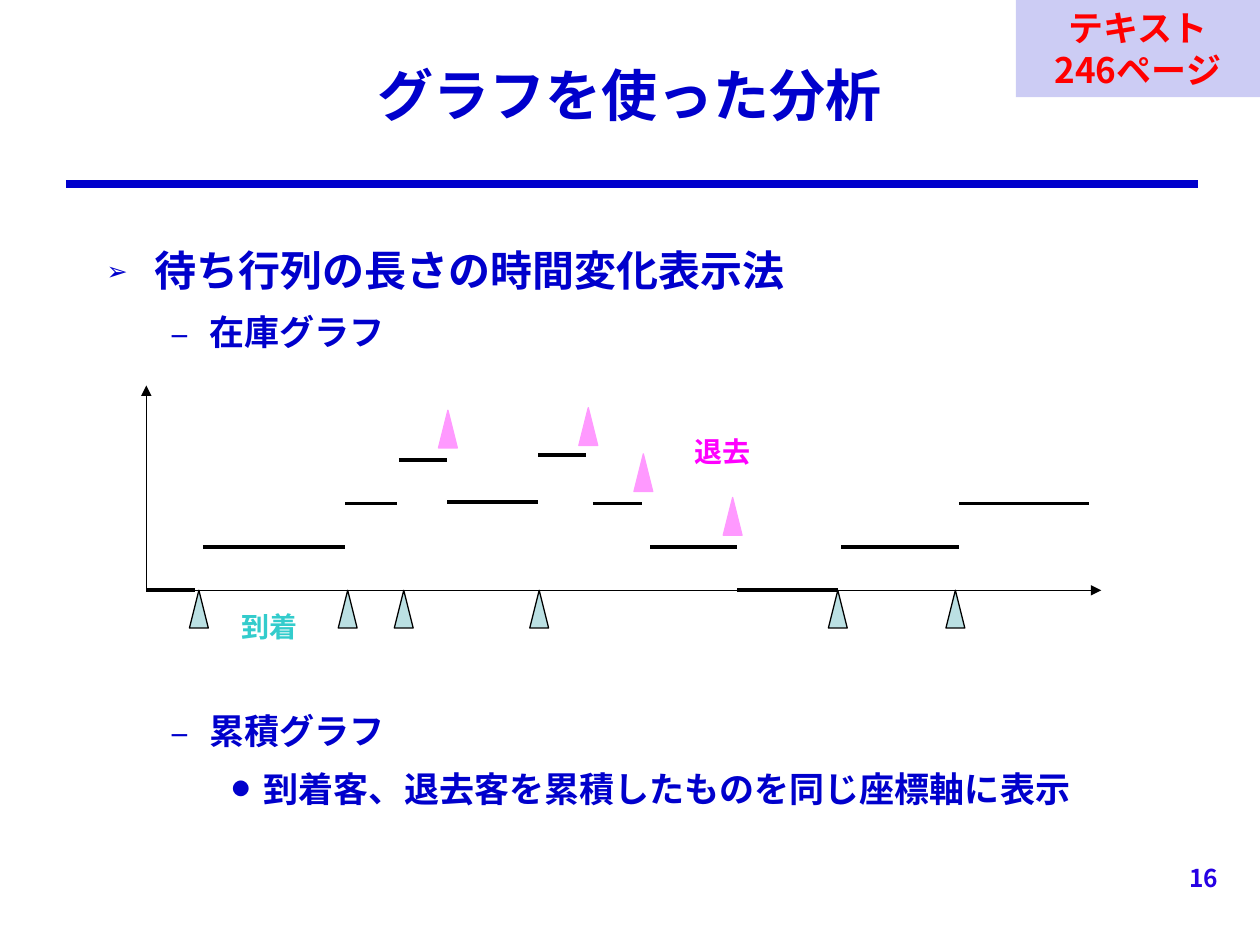
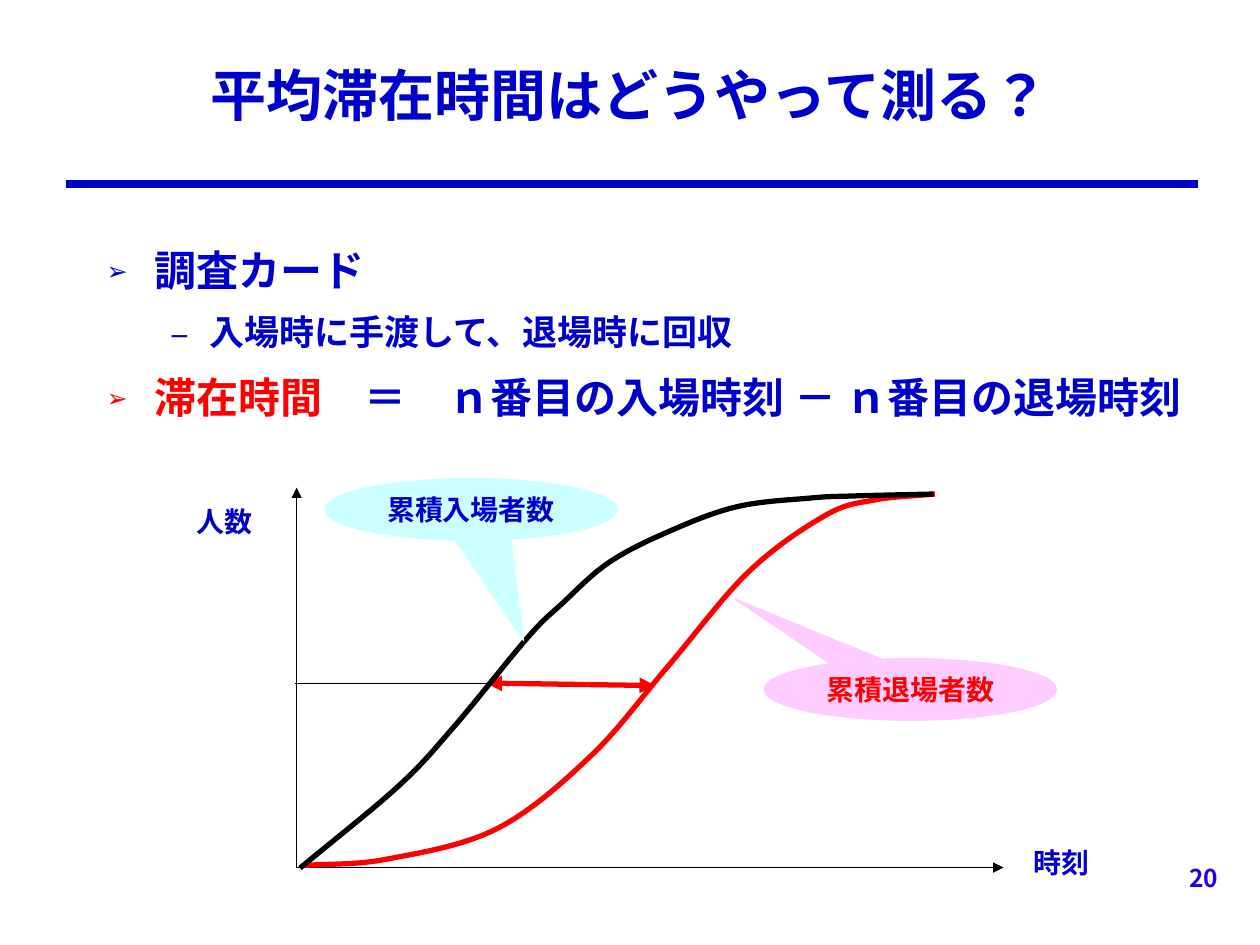
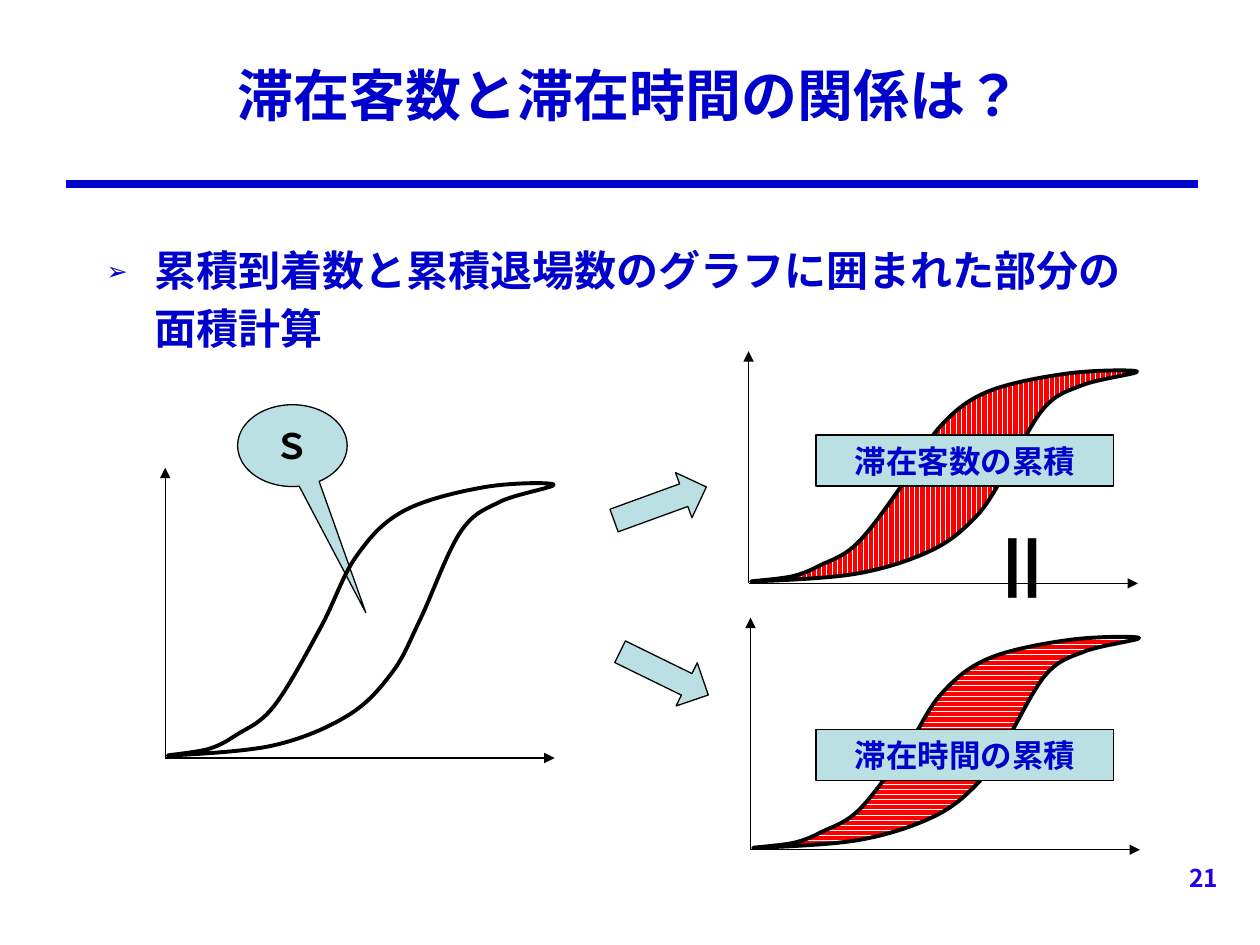
from dataclasses import dataclass
from typing import NamedTuple

from lxml.etree import SubElement
from pptx import Presentation
from pptx.dml.color import RGBColor
from pptx.enum.dml import MSO_PATTERN
from pptx.enum.lang import MSO_LANGUAGE_ID
from pptx.enum.shapes import MSO_CONNECTOR, MSO_SHAPE
from pptx.enum.text import MSO_ANCHOR, PP_ALIGN
from pptx.oxml.ns import qn
from pptx.util import Cm, Pt


@dataclass(frozen=True)
class Theme:
    blue: str = "0000CC"
    number: str = "2600E4"
    red: str = "FF0000"
    black: str = "000000"
    white: str = "FFFFFF"
    pale_teal: str = "BBE0E3"
    teal: str = "33CCCC"
    pink: str = "FF99FF"
    magenta: str = "FF00FF"
    pale_pink: str = "FFCCFF"
    pale_cyan: str = "CCFFFF"
    sans: str = "Noto Sans CJK JP"
    mono: str = "Courier New"
    title_size: int = 32
    body_size: int = 24
    sub_size: int = 20
    caption_size: int = 18
    label_size: int = 16
    number_size: int = 14
    sign_size: int = 48
    thin: float = 0.75
    medium: float = 2.25
    thick: float = 3
    rule: float = 4.5
    leading: float = 1.2
    body_leading: float = 1.38
    body_gap: float = 0.27


THEME = Theme()


class Point(NamedTuple):
    x: float
    y: float


class Box(NamedTuple):
    left: float
    top: float
    width: float
    height: float

    def lengths(self) -> list[Cm]:
        return [Cm(value) for value in self]


class Style(NamedTuple):
    size: float
    color: str = THEME.blue
    font: str = THEME.sans
    align: PP_ALIGN = PP_ALIGN.CENTER


class Level(NamedTuple):
    mark: str
    mark_percent: int
    indent: float
    hanging: float
    size: int


class Item(NamedTuple):
    """A bulleted line; the lead is a red opening part, the gap replaces the usual space above."""
    level: int
    text: str
    lead: str = ""
    gap: float | None = None


class Step(NamedTuple):
    """One flat stretch of the stock graph."""
    start: float
    end: float
    queue: float


class Panel(NamedTuple):
    """A small cumulative graph placed by the origin of its axes."""
    origin: Point
    axis_height: float
    scale: float
    pattern: MSO_PATTERN | None = None


LEVELS = (
    Level("➢", 60, 0.97, 0.97, THEME.body_size),
    Level("–", 100, 2.07, 0.79, THEME.sub_size),
    Level("●", 50, 3.17, 0.64, THEME.sub_size),
)
TITLE_BOX = Box(1.9, 0.39, 21.59, 3)
NUMBER_BOX = Box(22.96, 17.27, 1.85, 1.27)
BODY_BOX = Box(1.9, 4.65, 21.59, 13.23)
LABEL = Style(THEME.label_size, font=THEME.mono)


def rgb(color: str) -> RGBColor:
    return RGBColor.from_string(color)


def format_run(run, style: Style) -> None:
    run.font.size = Pt(style.size)
    run.font.bold = True
    run.font.name = style.font
    run.font.color.rgb = rgb(style.color)
    run.font.language_id = MSO_LANGUAGE_ID.JAPANESE
    SubElement(run.font._element, qn("a:ea"), typeface=THEME.sans)


def put_text(shape, text: str, style: Style, anchor=MSO_ANCHOR.TOP, wrap: bool = True) -> None:
    frame = shape.text_frame
    frame.text = text
    frame.word_wrap = wrap
    frame.vertical_anchor = anchor
    for para in frame.paragraphs:
        para.alignment = style.align
        para.line_spacing = Pt(style.size * THEME.leading)
        for run in para.runs:
            format_run(run, style)


def add_label(page, box: Box, text: str, style: Style, anchor=MSO_ANCHOR.TOP):
    label = page.shapes.add_textbox(*box.lengths())
    put_text(label, text, style, anchor)
    return label


def add_block(page, kind: MSO_SHAPE, box: Box, fill: str, outline: str = THEME.black):
    block = page.shapes.add_shape(kind, *box.lengths())
    block.shadow.inherit = False
    block.fill.solid()
    block.fill.fore_color.rgb = rgb(fill)
    block.line.color.rgb = rgb(outline)
    block.line.width = Pt(THEME.thin)
    return block


def add_callout(page, box: Box, tip: tuple[float, float], text: str, style: Style,
                fill: str, outline: str) -> None:
    """The tip is measured from the centre, in widths and heights of the balloon."""
    callout = add_block(page, MSO_SHAPE.OVAL_CALLOUT, box, fill, outline)
    callout.adjustments[0], callout.adjustments[1] = tip
    put_text(callout, text, style, MSO_ANCHOR.MIDDLE)


def add_line(page, start: Point, end: Point, width: float, color: str = THEME.black,
             arrows: tuple[str, ...] = ()) -> None:
    line = page.shapes.add_connector(
        MSO_CONNECTOR.STRAIGHT, Cm(start.x), Cm(start.y), Cm(end.x), Cm(end.y))
    line.line.color.rgb = rgb(color)
    line.line.width = Pt(width)
    properties = line._element.spPr
    for arrow in arrows:
        SubElement(properties.find(qn("a:ln")), qn(f"a:{arrow}"), type="triangle")
    SubElement(properties, qn("a:effectLst"))


def add_axes(page, origin: Point, width: float, height: float) -> None:
    for end in (Point(origin.x + width, origin.y), Point(origin.x, origin.y - height)):
        add_line(page, origin, end, THEME.thin, arrows=("tailEnd",))


def bezier_points(knots: list[Point], closed: bool) -> list[Point]:
    """Two handles and an end for each piece of the smooth curve through the knots."""
    if closed:
        chain = [knots[-1], *knots, *knots[:2]]
    else:
        first, second = knots[:2]
        before_last, last = knots[-2:]
        chain = [Point(2 * first.x - second.x, 2 * first.y - second.y), *knots,
                 Point(2 * last.x - before_last.x, 2 * last.y - before_last.y)]
    points = []
    for before, start, end, after in zip(chain, chain[1:], chain[2:], chain[3:]):
        points += [
            Point(start.x + (end.x - before.x) / 6, start.y + (end.y - before.y) / 6),
            Point(end.x - (after.x - start.x) / 6, end.y - (after.y - start.y) / 6),
            end,
        ]
    return points


def add_curve(page, knots: list[Point], width: float, color: str = THEME.black,
              closed: bool = False):
    builder = page.shapes.build_freeform(Cm(knots[0].x), Cm(knots[0].y))
    builder.add_line_segments(
        [(Cm(x), Cm(y)) for x, y in bezier_points(knots, closed)], close=closed)
    curve = builder.convert_to_shape()
    segments = list(curve._element.iter(qn("a:lnTo")))
    if closed:
        segments = segments[:3 * len(knots)]
    for first, second, last in zip(segments[::3], segments[1::3], segments[2::3]):
        outline = first.getparent()
        bezier = outline.makeelement(qn("a:cubicBezTo"), {})
        outline.replace(first, bezier)
        for segment in (first, second, last):
            bezier.append(segment[0])
        outline.remove(second)
        outline.remove(last)
    curve.shadow.inherit = False
    curve.fill.background()
    curve.line.color.rgb = rgb(color)
    curve.line.width = Pt(width)
    return curve


def add_items(page, items: list[Item], box: Box = BODY_BOX) -> None:
    frame = page.shapes.add_textbox(*box.lengths()).text_frame
    frame.word_wrap = True
    for index, item in enumerate(items):
        level = LEVELS[item.level]
        para = frame.paragraphs[0] if index == 0 else frame.add_paragraph()
        para.level = item.level
        para.line_spacing = Pt(level.size * THEME.body_leading)
        usual_gap = level.size * THEME.body_gap if index else 0
        para.space_before = Pt(usual_gap if item.gap is None else item.gap)
        properties = para._p.get_or_add_pPr()
        properties.set("marL", str(Cm(level.indent)))
        properties.set("indent", str(-Cm(level.hanging)))
        SubElement(properties, qn("a:buSzPct"), val=str(level.mark_percent * 1000))
        SubElement(properties, qn("a:buFont"), typeface=THEME.sans)
        SubElement(properties, qn("a:buChar"), char=level.mark)
        for text, color in ((item.lead, THEME.red), (item.text, THEME.blue)):
            if text:
                span = para.add_run()
                span.text = text
                format_run(span, Style(level.size, color))


def add_page(deck, title: str, number: int):
    page = deck.slides.add_slide(deck.slide_layouts[6])
    add_line(page, Point(1.33, 3.71), Point(24.16, 3.71), THEME.rule, THEME.blue)
    add_label(page, NUMBER_BOX, str(number),
              Style(THEME.number_size, THEME.number, align=PP_ALIGN.RIGHT))
    add_label(page, TITLE_BOX, title, Style(THEME.title_size), MSO_ANCHOR.MIDDLE)
    return page


def build_stock_graph(deck) -> None:
    page = add_page(deck, "グラフを使った分析", 16)
    add_items(page, [
        Item(0, "待ち行列の長さの時間変化表示法"),
        Item(1, "在庫グラフ"),
        Item(1, "累積グラフ", gap=200.5),
        Item(2, "到着客、退去客を累積したものを同じ座標軸に表示"),
    ])
    origin = Point(2.95, 11.9)
    add_axes(page, origin, 19.25, 4.13)
    customer_height = 0.875
    for step in (
        Step(2.95, 3.94, 0), Step(4.09, 6.96, 1), Step(6.96, 8, 2), Step(8.04, 9.02, 3),
        Step(9.02, 10.85, 2.04), Step(10.85, 11.81, 3.11), Step(11.95, 12.95, 2),
        Step(13.11, 14.86, 1), Step(14.86, 16.89, 0), Step(16.96, 19.33, 1),
        Step(19.33, 21.95, 2),
    ):
        y = origin.y - step.queue * customer_height
        add_line(page, Point(step.start, y), Point(step.end, y), THEME.medium)

    arrivals = [Point(x, origin.y) for x in (3.82, 6.82, 7.95, 10.68, 16.7, 19.07)]
    departures = [Point(8.84, 8.27), Point(11.67, 8.22), Point(12.78, 9.15), Point(14.58, 10.03)]
    for corners, fill, outline in ((arrivals, THEME.pale_teal, THEME.black),
                                   (departures, THEME.pink, THEME.pink)):
        for corner in corners:
            add_block(page, MSO_SHAPE.ISOSCELES_TRIANGLE, Box(*corner, 0.38, 0.76), fill, outline)
    add_label(page, Box(13.44, 8.64, 2.26, 0.94), "退去", LABEL._replace(color=THEME.magenta))
    add_label(page, Box(4.31, 12.16, 2.26, 0.94), "到着", LABEL._replace(color=THEME.teal))

    badge = add_block(page, MSO_SHAPE.RECTANGLE, Box(20.48, 0, 4.92, 1.96), THEME.blue)
    badge.line.fill.background()
    SubElement(badge._element.spPr.find(qn("a:solidFill"))[0], qn("a:alpha"), val="20000")
    put_text(badge, "テキスト\n246ページ", Style(THEME.sub_size, THEME.red))


def build_stay_time(deck) -> None:
    page = add_page(deck, "平均滞在時間はどうやって測る？", 20)
    add_items(page, [
        Item(0, "調査カード"),
        Item(1, "入場時に手渡して、退場時に回収"),
        Item(0, "　＝　ｎ番目の入場時刻 － ｎ番目の退場時刻", lead="滞在時間"),
    ], BODY_BOX._replace(width=23.04))
    add_line(page, Point(13.08, 13.78), Point(5.94, 13.78), THEME.thin)
    add_line(page, Point(13.21, 13.82), Point(9.8, 13.77), THEME.thick, THEME.red,
             ("headEnd", "tailEnd"))
    add_axes(page, Point(5.98, 17.49), 14.25, 7.66)
    exits = [Point(6.12, 17.45), Point(7.8, 17.32), Point(10.01, 16.71), Point(11.91, 15.24),
             Point(13.46, 13.44), Point(15.09, 11.53), Point(16.64, 10.39),
             Point(17.63, 10.08), Point(18.85, 9.96)]
    entries = [Point(6.05, 17.5), Point(8.03, 15.85), Point(9.17, 14.63), Point(10.64, 12.85),
               Point(11.33, 12.17), Point(12.29, 11.33), Point(13.54, 10.69),
               Point(14.88, 10.21), Point(16.36, 10.04), Point(17.17, 10),
               Point(18.82, 9.96)]
    add_curve(page, exits, THEME.thick, THEME.red)
    add_curve(page, entries, THEME.thick)
    add_label(page, Box(20.53, 16.92, 1.73, 0.94), "時刻", LABEL)
    add_label(page, Box(3.66, 10.04, 1.73, 0.94), "人数", LABEL)
    add_callout(page, Box(15.41, 13.28, 5.89, 1.24), (-0.6, -1.47), "累積退場者数",
                LABEL._replace(color=THEME.red), THEME.pale_pink, THEME.pale_pink)
    add_callout(page, Box(6.55, 9.65, 5.89, 1.24), (0.18, 2.13), "累積入場者数",
                LABEL, THEME.pale_cyan, THEME.pale_cyan)


def add_panel(page, panel: Panel) -> None:
    """Axes with the area between arrivals and departures, heights measured upwards."""
    outline = ((0.09, 0.05), (0.87, 0.18), (1.43, 0.46), (2.19, 1.04), (3.13, 2.62),
               (3.85, 4.06), (4.81, 4.98), (6.44, 5.46), (7.83, 5.51), (6.74, 5.16),
               (5.95, 4.55), (5.14, 2.79), (4.58, 1.73), (3.69, 0.86), (2.17, 0.25))
    add_axes(page, panel.origin, 7.85, panel.axis_height)
    knots = [Point(panel.origin.x + x, panel.origin.y - y * panel.scale) for x, y in outline]
    area = add_curve(page, knots, THEME.medium, closed=True)
    if panel.pattern is not None:
        area.fill.patterned()
        area.fill.pattern = panel.pattern
        area.fill.fore_color.rgb = rgb(THEME.red)
        area.fill.back_color.rgb = rgb(THEME.white)


def build_area_comparison(deck) -> None:
    page = add_page(deck, "滞在客数と滞在時間の関係は？", 21)
    add_items(page, [Item(0, "累積到着数と累積退場数のグラフに囲まれた部分の面積計算")])
    equals = add_label(page, Box(19.3, 10.31, 2.62, 2.29), "＝",
                       Style(THEME.sign_size, THEME.black, THEME.mono))
    equals.rotation = 270
    add_callout(page, Box(4.79, 8.16, 2.21, 1.65), (0.67, 2.04), "Ｓ",
                Style(THEME.sub_size, THEME.black, THEME.mono), THEME.pale_teal, THEME.black)
    for panel in (
        Panel(Point(3.33, 15.28), 5.85, 1),
        Panel(Point(15.09, 11.76), 4.68, 0.775, MSO_PATTERN.DARK_VERTICAL),
        Panel(Point(15.13, 17.13), 4.68, 0.775, MSO_PATTERN.DARK_HORIZONTAL),
    ):
        add_panel(page, panel)
    for top, text in ((8.77, "滞在客数の累積"), (14.7, "滞在時間の累積")):
        caption = add_block(page, MSO_SHAPE.RECTANGLE, Box(16.45, top, 6, 1.03),
                            THEME.pale_teal)
        put_text(caption, text, Style(THEME.caption_size), MSO_ANCHOR.MIDDLE, wrap=False)
    for left, top, angle in ((12.32, 9.67, 340), (12.4, 13.09, 26.1)):
        arrow = add_block(page, MSO_SHAPE.RIGHT_ARROW, Box(left, top, 1.98, 0.97),
                          THEME.pale_teal)
        arrow.rotation = angle


def main() -> None:
    deck = Presentation()
    deck.slide_width, deck.slide_height = Cm(25.4), Cm(19.05)
    build_stock_graph(deck)
    build_stay_time(deck)
    build_area_comparison(deck)
    deck.save("out.pptx")


if __name__ == "__main__":
    main()
